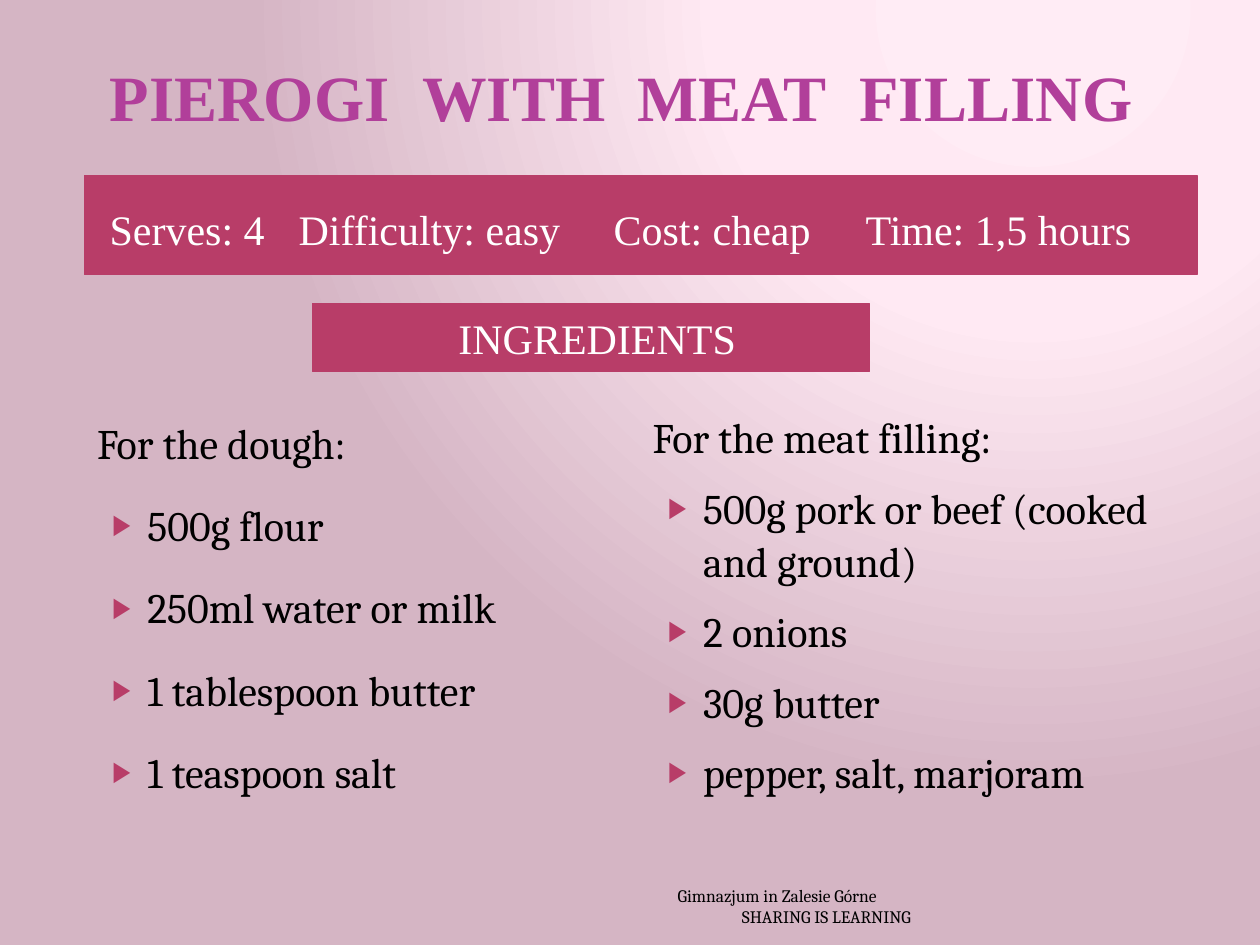
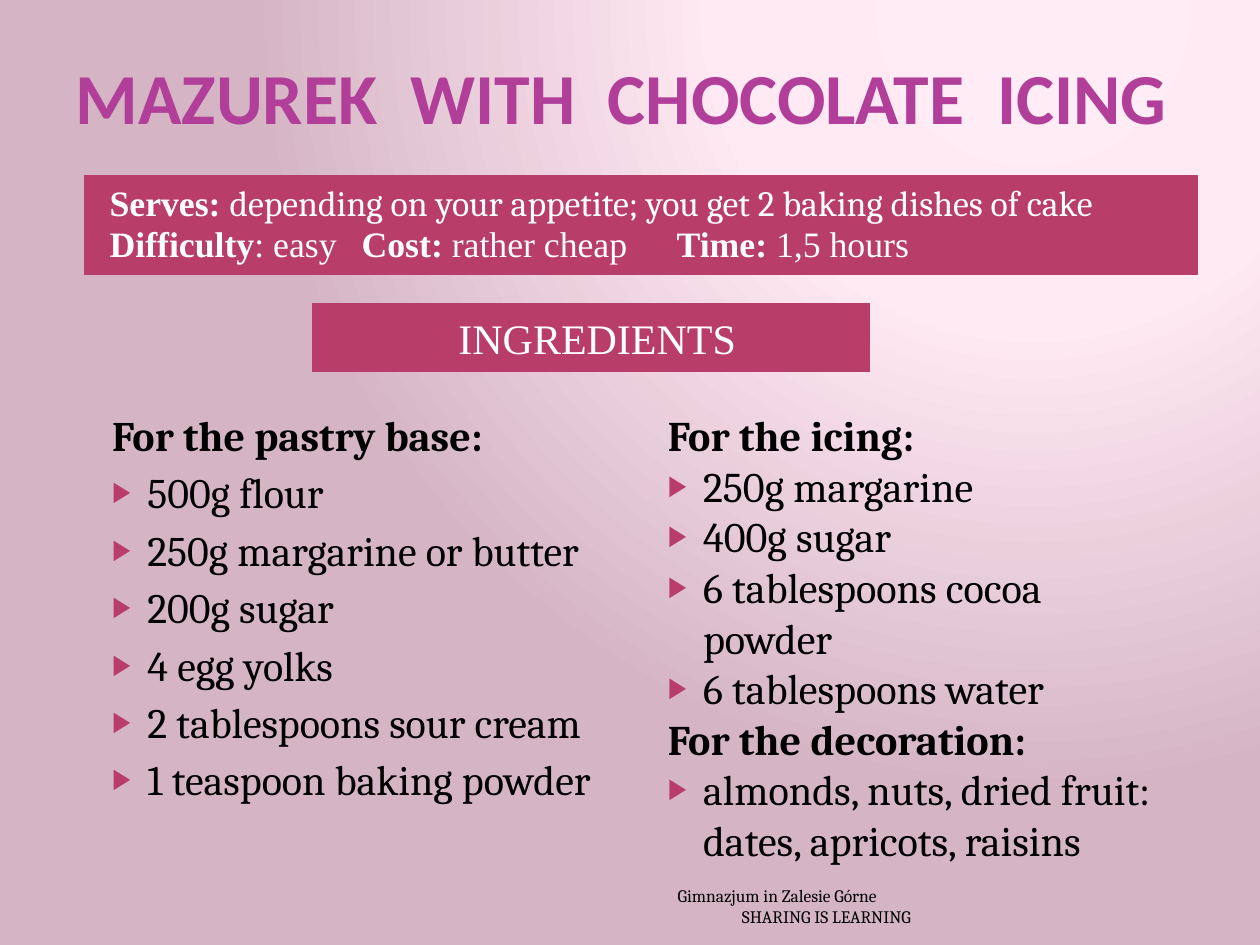
from pptx import Presentation
from pptx.dml.color import RGBColor
from pptx.enum.text import MSO_ANCHOR, MSO_AUTO_SIZE, PP_ALIGN
from pptx.oxml import parse_xml
from pptx.oxml.ns import nsdecls
from pptx.util import Inches, Pt
from lxml.etree import SubElement
from pptx.oxml.ns import qn

COLORS = {
    "title": "B13F9A",
    "band": "B83D68",
    "light": "FFFFFF",
    "dark": "000000",
    "glow": "FFECF5",
    "blush": "FFE9F3",
    "mauve": "D5B5C4",
}
SERIF, BODY = "Times New Roman", "Cambria"
COMPARISON_LAYOUT = 4
INFO, DOUGH, HEADING, FILLING = 1, 2, 3, 4
FOOTER = [("Gimnazjum in Zalesie Górne", 0.49), ("SHARING IS LEARNING", 1.0)]

RECIPES = [
    {
        "title": ("PIEROGI WITH MEAT FILLING", SERIF, 36.9),
        "info": {
            "lines": [[("Serves: 4\tDifficulty: easy\tCost: cheap\tTime: 1,5 hours", False, SERIF)]],
            "size": 24, "spacing": 1.15, "tabs": [1.6, 4.04, 6.05],
        },
        "lists": [
            {
                "place": DOUGH, "width": 4.42, "height": 3.42, "size": 24,
                "spacing": 1.15, "before": 4, "after": 10, "indent": 0, "bold": False,
                "groups": {"For the dough:": ["500g flour", "250ml water or milk",
                                              "1 tablespoon butter", "1 teaspoon salt"]},
            },
            {
                "place": FILLING, "width": 4.42, "height": 3.5, "size": 24,
                "spacing": 1.05, "before": 0, "after": 10, "indent": 0, "bold": False,
                "groups": {"For the meat filling:": ["500g pork or beef (cooked and ground)", "2 onions",
                                                     "30g butter", "pepper, salt, marjoram"]},
            },
        ],
    },
    {
        "title": ("MAZUREK WITH CHOCOLATE ICING", "Calibri", 41),
        "info": {
            "lines": [
                [("Serves: ", True, SERIF),
                 ("depending on your appetite; you get 2 baking dishes of cake", False, BODY)],
                [("Difficulty", True, SERIF), (": easy\t", False, SERIF),
                 ("Cost: ", True, SERIF), ("rather cheap\t", False, SERIF),
                 ("Time: ", True, SERIF), ("1,5 hours", False, SERIF)],
            ],
            "size": 20.4, "spacing": 0.95, "tabs": [2.11, 4.6],
        },
        "lists": [
            {
                "place": DOUGH, "width": 4.42, "height": 3.42, "size": 24,
                "spacing": 1.0, "before": 4, "after": 0, "indent": 0.12, "bold": True,
                "groups": {"For the pastry base:": ["500g flour", "250g margarine or butter", "200g sugar",
                                                    "4 egg yolks", "2 tablespoons sour cream",
                                                    "1 teaspoon baking powder"]},
            },
            {
                "place": FILLING, "width": 4.17, "height": 3.5, "size": 24.1,
                "spacing": 1.0, "before": 0, "after": 0, "indent": 0.12, "bold": True,
                "groups": {
                    "For the icing:": ["250g margarine", "400g sugar", "6 tablespoons cocoa powder",
                                       "6 tablespoons water"],
                    "For the decoration:": ["almonds, nuts, dried fruit: dates, apricots, raisins"],
                },
            },
        ],
    },
]


class RecipeDeck:
    """Holds the deck style and the current page."""

    def __init__(self):
        self.deck = Presentation()
        self.deck.slide_width, self.deck.slide_height = Inches(10), Inches(7.5)
        self.page = None
        self.paint_background()

    def paint_background(self):
        master = self.deck.slide_master
        master.background.fill.solid()
        backdrop = master.element.xpath(".//p:bgPr")[0]
        stops = "".join(
            f'<a:gs pos="{percent * 1000}"><a:srgbClr val="{COLORS[name]}"/></a:gs>'
            for percent, name in [(0, "glow"), (40, "blush"), (100, "mauve")])
        backdrop.replace(backdrop[0], parse_xml(
            f'<a:gradFill {nsdecls("a")} rotWithShape="1"><a:gsLst>{stops}</a:gsLst>'
            '<a:path path="circle"><a:fillToRect l="65000" t="0" r="0" b="98000"/></a:path></a:gradFill>'))

    def add_page(self):
        self.page = self.deck.slides.add_slide(self.deck.slide_layouts[COMPARISON_LAYOUT])

    def place(self, index, left, top, width, height, anchor):
        box = self.page.placeholders[index]
        box.left, box.top, box.width, box.height = map(Inches, (left, top, width, height))
        self.set_frame(box.text_frame, anchor)
        return box

    def set_frame(self, frame, anchor):
        frame.word_wrap = True
        frame.auto_size = MSO_AUTO_SIZE.NONE
        frame.vertical_anchor = anchor

    def paragraph(self, frame, number):
        return frame.add_paragraph() if number else frame.paragraphs[0]

    def layout(self, para, align=PP_ALIGN.LEFT, spacing=1.0, before=0, after=0, margin=0, indent=0):
        para.alignment = align
        para.line_spacing = spacing
        para.space_before, para.space_after = Pt(before), Pt(after)
        properties = para._p.get_or_add_pPr()
        properties.set("marL", str(Inches(margin)))
        properties.set("indent", str(Inches(indent)))
        return properties

    def style(self, target, font, size, color, bold=False):
        target.font.name, target.font.size, target.font.bold = font, Pt(size), bold
        target.font.color.rgb = RGBColor.from_string(COLORS[color])

    def title(self, text, font, size):
        box = self.place(0, 0.43, 0.29, 9, 0.94, MSO_ANCHOR.MIDDLE)
        para = box.text_frame.paragraphs[0]
        self.layout(para, PP_ALIGN.CENTER)
        for number, word in enumerate(text.split()):
            if number:
                gap = para.add_run()
                gap.text = " "
                gap._r.get_or_add_rPr().set("spc", "925")
            para.add_run().text = word
        for span in para.runs:
            self.style(span, font, size, "title", True)

    def band(self, index, left, top, width, height):
        box = self.place(index, left, top, width, height, MSO_ANCHOR.MIDDLE)
        box.fill.solid()
        box.fill.fore_color.rgb = box.line.color.rgb = RGBColor.from_string(COLORS["band"])
        box.line.width = Pt(0.75)
        box.text_frame.margin_left = Inches(0.2)
        return box.text_frame

    def info(self, lines, size, spacing, tabs):
        frame = self.band(INFO, 0.67, 1.39, 8.83, 0.79)
        for number, line in enumerate(lines):
            para = self.paragraph(frame, number)
            stops = SubElement(self.layout(para, spacing=spacing), qn("a:tabLst"))
            for tab in tabs:
                SubElement(stops, qn("a:tab"), pos=str(Inches(tab)), algn="l")
            for text, bold, font in line:
                span = para.add_run()
                span.text = text
                self.style(span, font, size, "light", bold)

    def heading(self, text):
        frame = self.band(HEADING, 2.48, 2.41, 4.42, 0.54)
        frame.text = text
        self.layout(frame.paragraphs[0], PP_ALIGN.CENTER)
        self.style(frame.paragraphs[0].runs[0], SERIF, 24, "light")

    def bullet(self, properties, shown):
        if not shown:
            SubElement(properties, qn("a:buNone"))
            return
        color = SubElement(properties, qn("a:buClr"))
        SubElement(color, qn("a:srgbClr"), val=COLORS["band"])
        SubElement(properties, qn("a:buSzPct"), val="68000")
        SubElement(properties, qn("a:buChar"), char="▶")

    def ingredients(self, place, width, height, size, spacing, before, after, indent, bold, groups):
        left = 0.67 if place == DOUGH else 5.08
        frame = self.place(place, left, 3.2, width, height, MSO_ANCHOR.TOP).text_frame
        rows = [(text, text == name) for name, items in groups.items() for text in [name, *items]]
        for number, (text, is_name) in enumerate(rows):
            para = self.paragraph(frame, number)
            para.text = text
            margin, hanging = (indent, 0) if is_name else (0.4, -0.28)
            properties = self.layout(para, spacing=spacing, before=before if number else 0,
                                     after=after, margin=margin, indent=hanging)
            self.bullet(properties, not is_name)
            self.style(para.runs[0], BODY, size, "dark", bold and is_name)

    def footer(self):
        box = self.page.shapes.add_textbox(Inches(4.79), Inches(7.01), Inches(2.57), Inches(0.4))
        self.set_frame(box.text_frame, MSO_ANCHOR.BOTTOM)
        for number, (text, margin) in enumerate(FOOTER):
            para = self.paragraph(box.text_frame, number)
            para.text = text
            self.layout(para, margin=margin)
            self.style(para.runs[0], BODY, 10, "dark")


def main():
    book = RecipeDeck()
    for recipe in RECIPES:
        book.add_page()
        book.title(*recipe["title"])
        book.info(**recipe["info"])
        book.heading("INGREDIENTS")
        for column in recipe["lists"]:
            book.ingredients(**column)
        book.footer()
    book.deck.save("out.pptx")


if __name__ == "__main__":
    main()
